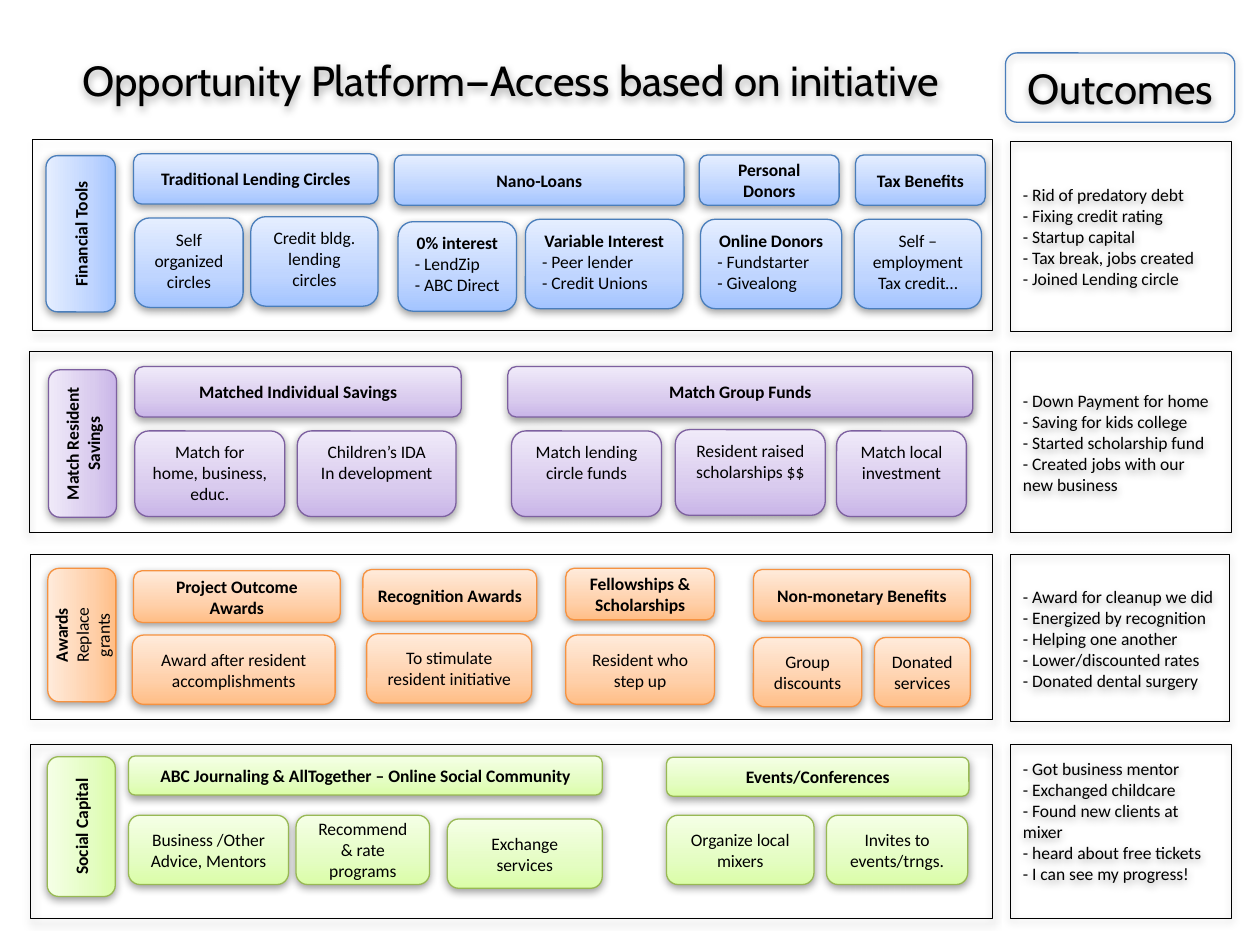
from dataclasses import dataclass

from lxml import etree
from pptx import Presentation
from pptx import util as u
from pptx.dml import color
from pptx.enum import shapes, text as t
from pptx.oxml import ns


@dataclass(frozen=True)
class Theme:
    ink: str = "000000"
    outcome_line: str = "4A7EBB"
    heading_font: str = "Cabin"
    body_font: str = "Calibri"
    heading_size: int = 24
    body_size: int = 10
    box_line: float = 0.75
    frame_line: float = 0.5
    box_shadow: tuple = (38, 5, 1.6)
    frame_shadow: tuple = (35, 5, 1.8)
    blue: tuple = ("4A7EBB", "A3C4FF", "BFD5FF", "E5EEFF")
    purple: tuple = ("7D60A0", "C9B5E8", "D9CBEE", "F0EAF9")
    orange: tuple = ("F69240", "FFBE86", "FFD0AA", "FFEBDB")
    green: tuple = ("98B954", "DAFDA7", "E4FDC2", "F5FFE6")


@dataclass(frozen=True)
class Section:
    palette: tuple
    frame: tuple
    label: str
    label_place: tuple
    heading_height: float
    headings: list
    item_height: float
    items: list
    outcome_place: tuple
    outcomes: str
    item_anchor: t.MSO_ANCHOR = t.MSO_ANCHOR.MIDDLE
    outcome_bottom: float = 0.05


THEME = Theme()

SECTIONS = [
    Section(
        THEME.blue, (0.26, 1.11, 7.62, 1.51),
        "Financial Tools", (0.02, 1.58, 1.24, 0.55),
        0.4, [
            (1.06, 1.22, 1.94, "Traditional Lending Circles"),
            (3.13, 1.23, 2.3, "Nano-Loans"),
            (5.55, 1.23, 1.11, "Personal Donors"),
            (6.79, 1.23, 1.03, "Tax Benefits"),
        ],
        0.71, [
            (1.07, 1.73, 0.86, "Self organized circles"),
            (1.99, 1.72, 1.01, "Credit bldg. lending circles"),
            (3.16, 1.76, 0.94, "0% interest\n- LendZip\n- ABC Direct"),
            (4.17, 1.74, 1.25, "Variable Interest\n- Peer lender\n- Credit Unions"),
            (5.56, 1.74, 1.12, "Online Donors\n- Fundstarter\n- Givealong"),
            (6.78, 1.74, 1.01, "Self – employment\nTax credit…"),
        ],
        (8.02, 1.12, 1.75, 1.51),
        "- Rid of predatory debt\n- Fixing credit rating\n- Startup capital\n"
        "- Tax break, jobs created\n- Joined Lending circle",
        item_anchor=t.MSO_ANCHOR.TOP,
    ),
    Section(
        THEME.purple, (0.23, 2.79, 7.65, 1.44),
        "Match Resident Savings", (0.07, 3.25, 1.17, 0.54),
        0.4, [
            (1.07, 2.91, 2.59, "Matched Individual Savings"),
            (4.03, 2.91, 3.69, "Match Group Funds"),
        ],
        0.68, [
            (1.07, 3.42, 1.19, "Match for\vhome, business, educ."),
            (2.36, 3.42, 1.26, "Children’s IDA\nIn development"),
            (4.06, 3.42, 1.19, "Match lending circle funds"),
            (5.36, 3.41, 1.19, "Resident raised scholarships $$"),
            (6.64, 3.42, 1.03, "Match local investment"),
        ],
        (8.02, 2.79, 1.75, 1.44),
        "- Down Payment for home\n- Saving for kids college\n"
        "- Started scholarship fund\n- Created jobs with our new business",
        item_anchor=t.MSO_ANCHOR.TOP,
    ),
    Section(
        THEME.orange, (0.24, 4.4, 7.64, 1.31),
        "Awards\nReplace\vgrants", (0.12, 4.77, 1.06, 0.54),
        0.41, [
            (1.06, 4.53, 1.64, "Project Outcome Awards"),
            (2.88, 4.52, 1.38, "Recognition Awards"),
            (4.49, 4.51, 1.18, "Fellowships & Scholarships"),
            (5.98, 4.52, 1.72, "Non-monetary Benefits"),
        ],
        0.55, [
            (1.05, 5.04, 1.61, "Award after resident accomplishments"),
            (2.91, 5.03, 1.31, "To stimulate resident initiative"),
            (4.49, 5.04, 1.18, "Resident who step up"),
            (5.98, 5.06, 0.86, "Group discounts"),
            (6.94, 5.06, 0.76, "Donated services"),
        ],
        (8.02, 4.4, 1.74, 1.33),
        "- Award for cleanup we did\n- Energized by recognition\n"
        "- Helping one another\n- Lower/discounted rates\n- Donated dental surgery",
    ),
    Section(
        THEME.green, (0.24, 5.91, 7.64, 1.38),
        "Social Capital", (0.09, 6.29, 1.11, 0.54),
        0.31, [
            (1.02, 6, 3.76, "ABC Journaling & AllTogether – Online Social Community"),
            (5.29, 6.01, 2.4, "Events/Conferences"),
        ],
        0.55, [
            (1.02, 6.47, 1.27, "Business /Other Advice, Mentors"),
            (2.35, 6.47, 1.06, "Recommend & rate programs"),
            (3.55, 6.5, 1.23, "Exchange services"),
            (5.29, 6.47, 1.17, "Organize local mixers"),
            (6.56, 6.47, 1.12, "Invites to events/trngs."),
        ],
        (8.02, 5.91, 1.75, 1.38),
        "- Got business mentor\n- Exchanged childcare\n- Found new clients at mixer\n"
        "- heard about free tickets\n- I can see my progress!",
        outcome_bottom=0.22,
    ),
]


def add_element(parent, tag, **attributes):
    values = {name: str(value) for name, value in attributes.items()}
    return etree.SubElement(parent, ns.qn(tag), values)


def set_shadow(shape, alpha, blur, distance):
    shape.shadow.inherit = False
    effects = shape._element.spPr.find(ns.qn("a:effectLst"))
    shadow = add_element(effects, "a:outerShdw", blurRad=u.Pt(blur), dist=u.Pt(distance),
                         dir=5400000, rotWithShape=0)
    tint = add_element(shadow, "a:srgbClr", val=THEME.ink)
    add_element(tint, "a:alpha", val=alpha * 1000)


def set_gradient(shape, colors):
    shape.fill.gradient()
    gradient = shape._element.spPr.find(ns.qn("a:gradFill"))
    for child in list(gradient):
        gradient.remove(child)
    gradient.set("rotWithShape", "1")
    stops = add_element(gradient, "a:gsLst")
    for position, value in zip((0, 35, 100), colors):
        stop = add_element(stops, "a:gs", pos=position * 1000)
        add_element(stop, "a:srgbClr", val=value)
    add_element(gradient, "a:lin", ang=16200000, scaled=0)


def write_text(shape, text, font=THEME.body_font, size=THEME.body_size,
               bold_first=False, anchor=t.MSO_ANCHOR.MIDDLE, bottom=0.05):
    frame = shape.text_frame
    frame.text = text
    frame.word_wrap = True
    frame.auto_size = t.MSO_AUTO_SIZE.NONE
    frame.vertical_anchor = anchor
    frame.margin_bottom = u.Inches(bottom)
    for index, paragraph in enumerate(frame.paragraphs):
        listed = paragraph.text.startswith("- ")
        paragraph.alignment = t.PP_ALIGN.LEFT if listed else t.PP_ALIGN.CENTER
        for run in paragraph.runs:
            run.font.name = font
            run.font.size = u.Pt(size)
            run.font.bold = bold_first and index == 0
            run.font.color.rgb = color.RGBColor.from_string(THEME.ink)


def add_panel(slide, place, kind=shapes.MSO_SHAPE.RECTANGLE, line=THEME.ink,
              width=THEME.frame_line, shadow=THEME.frame_shadow):
    shape = slide.shapes.add_shape(kind, *map(u.Inches, place))
    shape.fill.background()
    shape.line.color.rgb = color.RGBColor.from_string(line)
    shape.line.width = u.Pt(width)
    set_shadow(shape, *shadow)
    return shape


def add_box(slide, place, palette, text, **text_format):
    line, *gradient = palette
    shape = add_panel(slide, place, shapes.MSO_SHAPE.ROUNDED_RECTANGLE, line,
                      THEME.box_line, THEME.box_shadow)
    set_gradient(shape, gradient)
    write_text(shape, text, **text_format)
    return shape


def add_title(slide, text):
    title = slide.shapes.title
    title.left, title.top, title.width, title.height = map(u.Inches, (0.23, 0.29, 7.65, 0.68))
    set_shadow(title, *THEME.frame_shadow)
    write_text(title, text, font=THEME.heading_font, size=THEME.heading_size)


def add_section(slide, section):
    add_panel(slide, section.frame)
    label = add_box(slide, section.label_place, section.palette, section.label, bold_first=True)
    label.rotation = 270
    for left, top, width, text in section.headings:
        add_box(slide, (left, top, width, section.heading_height), section.palette, text,
                bold_first=True)
    for left, top, width, text in section.items:
        add_box(slide, (left, top, width, section.item_height), section.palette, text,
                bold_first="\n- " in text, anchor=section.item_anchor)
    outcome = add_panel(slide, section.outcome_place)
    write_text(outcome, section.outcomes, bottom=section.outcome_bottom)


def main():
    presentation = Presentation()
    presentation.slide_width, presentation.slide_height = u.Inches(10), u.Inches(7.5)
    slide = presentation.slides.add_slide(presentation.slide_layouts[5])
    add_title(slide, "Opportunity Platform—Access based on initiative")
    outcomes = add_panel(slide, (7.98, 0.42, 1.82, 0.55), shapes.MSO_SHAPE.ROUNDED_RECTANGLE,
                         THEME.outcome_line, THEME.box_line)
    write_text(outcomes, "Outcomes", font=THEME.heading_font, size=THEME.heading_size)
    for section in SECTIONS:
        add_section(slide, section)
    presentation.save("out.pptx")


if __name__ == "__main__":
    main()
